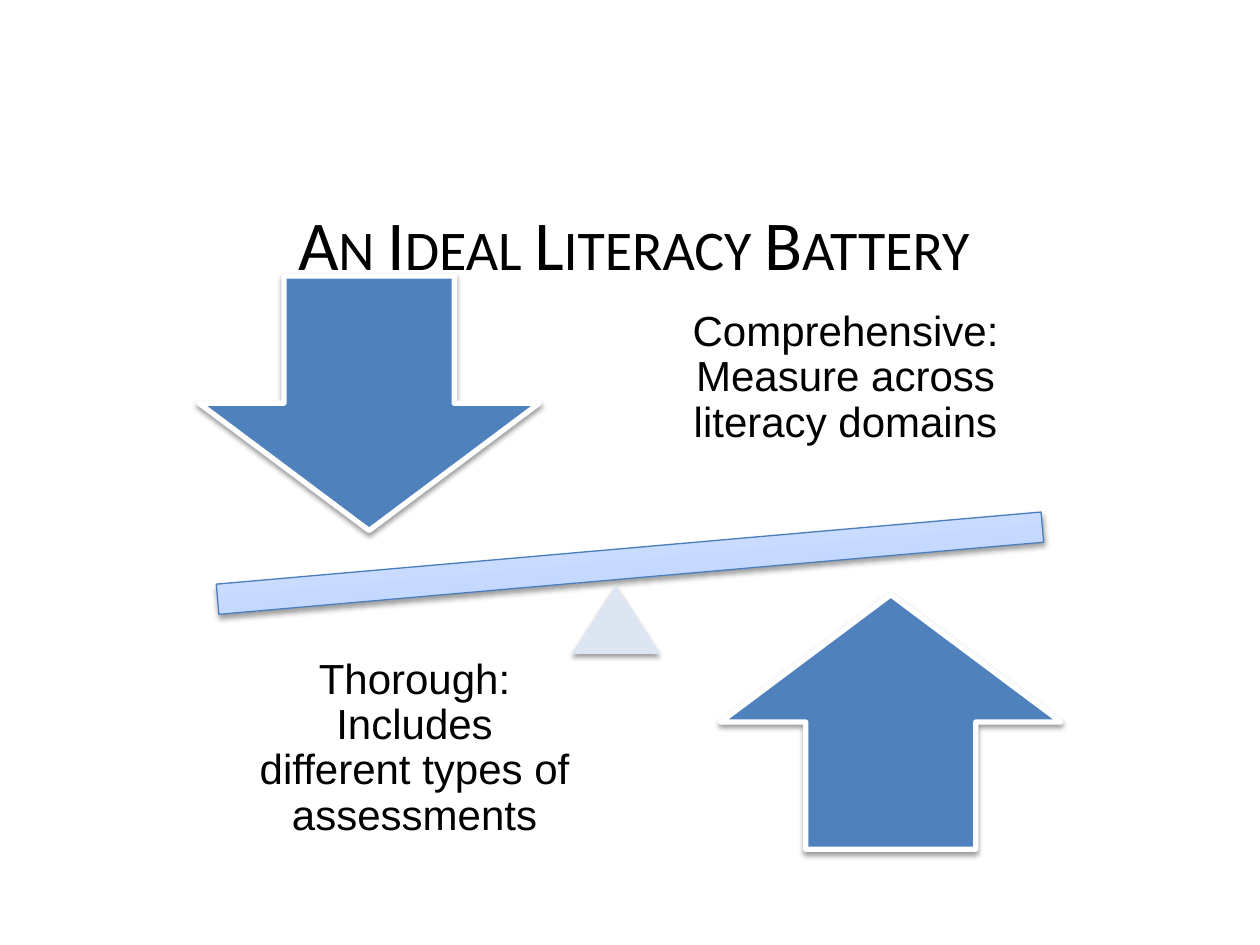
from lxml.etree import SubElement
from pptx import Presentation
from pptx.dml.color import RGBColor
from pptx.enum.shapes import MSO_SHAPE
from pptx.enum.text import MSO_ANCHOR, PP_ALIGN
from pptx.oxml import parse_xml
from pptx.oxml.ns import nsdecls, qn
from pptx.util import Inches, Pt

presentation = Presentation()
presentation.slide_width = Inches(10)
presentation.slide_height = Inches(7.5)
slide = presentation.slides.add_slide(presentation.slide_layouts[6])
COLUMN = presentation.slide_width / 100
ROW = presentation.slide_height / 75


def add_text(left, top, width, height, text, size, font, inset):
    """Add a centred one-run text box and return its paragraph and run."""
    box = slide.shapes.add_textbox(
        int(left * COLUMN), int(top * ROW), int(width * COLUMN), int(height * ROW))
    frame = box.text_frame
    frame.word_wrap = True
    frame.vertical_anchor = MSO_ANCHOR.MIDDLE
    frame.margin_left = frame.margin_right = Inches(inset)
    frame.margin_top = frame.margin_bottom = Inches(inset)
    paragraph = frame.paragraphs[0]
    paragraph.alignment = PP_ALIGN.CENTER
    run = paragraph.add_run()
    run.text = text
    run.font.size = Pt(size)
    run.font.name = font
    run.font.color.rgb = RGBColor.from_string("000000")
    return paragraph, run


def add_shadowed(kind, left, top, width, height, fill, line=None, weight=0):
    """Add a filled shape with a soft shadow below it."""
    shape = slide.shapes.add_shape(
        kind, int(left * COLUMN), int(top * ROW), int(width * COLUMN), int(height * ROW))
    shape.fill.solid()
    shape.fill.fore_color.rgb = RGBColor.from_string(fill)
    if line:
        shape.line.color.rgb = RGBColor.from_string(line)
        shape.line.width = Pt(weight)
    else:
        shape.line.fill.background()
    shape.shadow.inherit = False
    effects = shape.element.spPr.find(qn("a:effectLst"))
    shadow = SubElement(effects, qn("a:outerShdw"), blurRad=str(Pt(3.1)),
                        dist=str(Pt(1.6)), dir="5400000", rotWithShape="0")
    color = SubElement(shadow, qn("a:srgbClr"), val="000000")
    SubElement(color, qn("a:alpha"), val="38000")
    return shape


# Title
paragraph, run = add_text(7.3, 14.7, 86, 9.1, "An Ideal Literacy Battery", 40, "Calibri", 0.05)
run.font._element.set("cap", "small")

# Tilted beam with a gradient
beam = add_shadowed(MSO_SHAPE.MATH_MINUS, 5.3, 39.6, 89.4, 10.2, "BFD4FF", "4B7EBC", 0.75)
beam.rotation = 355
stops = "".join(
    f'<a:gs pos="{position * 1000}"><a:srgbClr val="{color}"/></a:gs>'
    for position, color in [(0, "A4C4FF"), (35, "BFD4FF"), (100, "E6EEFF")])
gradient = parse_xml(
    f'<a:gradFill {nsdecls("a")} rotWithShape="1"><a:gsLst>{stops}</a:gsLst>'
    '<a:lin ang="16200000" scaled="0"/></a:gradFill>')
properties = beam.element.spPr
properties.replace(properties.find(qn("a:solidFill")), gradient)

# Each arrow faces its statement across the beam
sides = [
    (MSO_SHAPE.DOWN_ARROW, 15.8, 21.9, 52.7, 19.4,
     "Comprehensive: Measure across literacy domains"),
    (MSO_SHAPE.UP_ARROW, 57.2, 47.2, 18.5, 48.8,
     "Thorough: Includes different types of assessments"),
]
for kind, arrow_left, arrow_top, text_left, text_top, statement in sides:
    add_shadowed(kind, arrow_left, arrow_top, 27, 20.2, "4F81BD", "FFFFFF", 3)
    paragraph, run = add_text(text_left, text_top, 28.8, 21.2, statement, 24, "Arial", 0.19)
    paragraph.line_spacing = 0.9
    paragraph.space_after = Pt(8.4)

# Pivot under the beam
add_shadowed(MSO_SHAPE.ISOSCELES_TRIANGLE, 45.4, 46.5, 7, 5.4, "DCE6F2")

presentation.save("out.pptx")
